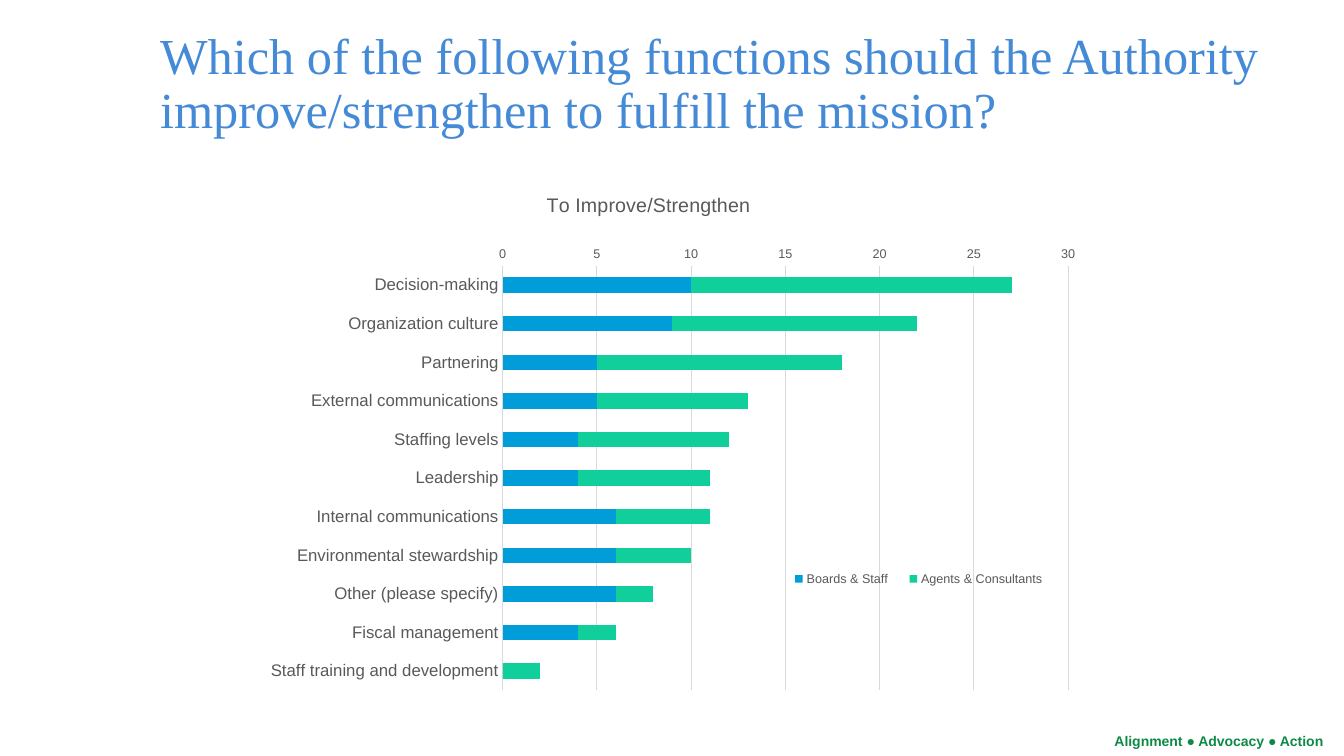
from dataclasses import dataclass

from lxml import etree
from pptx import Presentation
from pptx import util as u
from pptx.chart.data import CategoryChartData
from pptx.dml.color import RGBColor
from pptx.enum import chart as ch, text
from pptx.oxml import parse_xml
from pptx.oxml.ns import nsdecls

GREY, RULE = "595959", "D9D9D9"


@dataclass
class Series:
    name: str
    color: str
    values: tuple[int, ...]


CATEGORIES = (
    "Decision-making", "Organization culture", "Partnering",
    "External communications", "Staffing levels", "Leadership",
    "Internal communications", "Environmental stewardship",
    "Other (please specify)", "Fiscal management",
    "Staff training and development",
)
SERIES = (
    Series("Boards & Staff", "009DD9", (10, 9, 5, 5, 4, 4, 6, 6, 6, 4, 0)),
    Series("Agents & Consultants", "10CF9B", (17, 13, 13, 8, 8, 7, 5, 4, 2, 2, 2)),
)


def rgb(color: str) -> RGBColor:
    return RGBColor.from_string(color)


def set_font(font, size: float, color: str, name: str = "Arial", bold: bool = False) -> None:
    font.size, font.name, font.bold = u.Pt(size), name, bold
    font.color.rgb = rgb(color)


def add_text(s, content: str, box: tuple[float, ...], *, wrap: bool = True,
             anchor=text.MSO_ANCHOR.TOP, spacing: float = 1.0, **fmt) -> None:
    tf = s.shapes.add_textbox(*map(u.Pt, box)).text_frame
    tf.word_wrap, tf.vertical_anchor = wrap, anchor
    p = tf.paragraphs[0]
    p.line_spacing = spacing
    r = p.add_run()
    r.text = content
    set_font(r.font, **fmt)


def make_layout(x: float, y: float, w: float = 0, h: float = 0, inner: bool = False) -> etree._Element:
    """Manual chart layout, in fractions of the chart area."""
    target = '<c:layoutTarget val="inner"/>' if inner else ""
    modes = '<c:xMode val="edge"/><c:yMode val="edge"/>'
    size = f'<c:w val="{w}"/><c:h val="{h}"/>' if w else ""
    return parse_xml(
        f'<c:layout {nsdecls("c")}><c:manualLayout>{target}{modes}'
        f'<c:x val="{x}"/><c:y val="{y}"/>{size}</c:manualLayout></c:layout>')


def place(parent, layout: etree._Element, after: str = "") -> None:
    for old in parent.xpath("c:layout"):
        parent.remove(old)
    if after:
        parent.xpath(after)[0].addnext(layout)
    else:
        parent.insert(0, layout)


def add_bar_chart(s, box: tuple[float, ...]) -> None:
    data = CategoryChartData(number_format="General")
    data.categories = CATEGORIES
    for item in SERIES:
        data.add_series(item.name, item.values)
    chart = s.shapes.add_chart(ch.XL_CHART_TYPE.BAR_STACKED, *map(u.Pt, box), data).chart
    set_font(chart.font, 10, "000000")

    # Bars
    plot = chart.plots[0]
    plot.gap_width, plot.overlap, plot.vary_by_categories = 150, 100, False
    for item, bars in zip(SERIES, plot.series):
        bars.format.fill.solid()
        bars.format.fill.fore_color.rgb = rgb(item.color)
        bars.invert_if_negative = False

    # Axes
    cat, val = chart.category_axis, chart.value_axis
    for axis, size in ((cat, 12), (val, 9)):
        axis.major_tick_mark = axis.minor_tick_mark = ch.XL_TICK_MARK.NONE
        set_font(axis.tick_labels.font, size, GREY)
    cat.reverse_order = True
    val.minimum_scale, val.maximum_scale, val.major_unit = 0, 30, 5
    val.has_major_gridlines = True
    for line in (cat.format.line, val.major_gridlines.format.line):
        line.color.rgb, line.width = rgb(RULE), u.Pt(0.75)
    val.format.line.fill.background()

    # Title and legend
    chart.has_title = True
    p = chart.chart_title.text_frame.paragraphs[0]
    r = p.add_run()
    r.text = "To Improve/Strengthen"
    set_font(r.font, 14, GREY)
    chart.has_legend = True
    legend = chart.legend
    legend.position, legend.include_in_layout = ch.XL_LEGEND_POSITION.BOTTOM, False
    set_font(legend.font, 9, GREY)

    # Positions inside the chart
    area = chart._chartSpace.chart.plotArea
    place(area, make_layout(0.357, 0.228, 0.602, 0.708, inner=True))
    place(chart.chart_title._element, make_layout(0.4, 0.1), after="c:tx")
    place(legend._element, make_layout(0.65, 0.73, 0.3, 0.04), after="c:legendPos")


def main() -> None:
    prs = Presentation()
    prs.slide_width, prs.slide_height = u.Pt(960), u.Pt(540)
    s = prs.slides.add_slide(prs.slide_layouts[6])

    # Footer motto, heading and chart
    add_text(s, "Alignment ● Advocacy ● Action", (789, 520, 172, 19.4),
             wrap=False, size=10, color="0D8A45", bold=True)
    add_text(s, "Which of the following functions should the Authority "
             "improve/strengthen to fulfill the mission?", (107.3, 13, 845.3, 95.8),
             anchor=text.MSO_ANCHOR.MIDDLE, spacing=0.9,
             size=36, color="448AD7", name="Times New Roman")
    add_bar_chart(s, (119.5, 92.2, 671, 428.4))

    prs.save("out.pptx")


if __name__ == "__main__":
    main()
